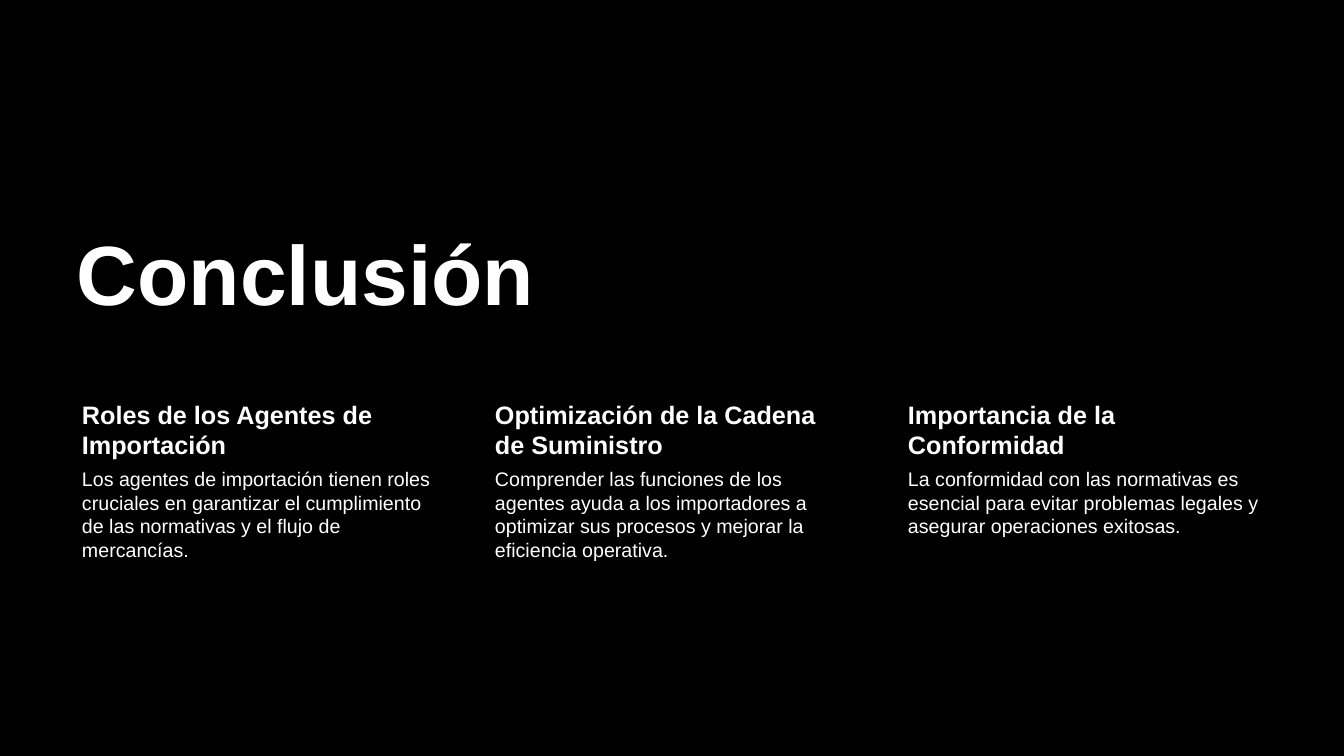
from pptx import Presentation
from pptx.dml.color import RGBColor
from pptx.enum.text import MSO_ANCHOR, MSO_AUTO_SIZE, PP_ALIGN
from pptx.util import Emu, Pt

BLACK = RGBColor(0, 0, 0)
WHITE = RGBColor(255, 255, 255)
SCALE = 914400 / 100.8

LEFT, PITCH, WIDTH = 67, 413, 375
HEAD_TOP, HEAD_HIGH, BODY_HIGH = 396, 69, 208

COLUMNS = [
    ("Roles de los Agentes de Importación",
     "Los agentes de importación tienen roles cruciales en garantizar el "
     "cumplimiento de las normativas y el flujo de mercancías."),
    ("Optimización de la Cadena de Suministro",
     "Comprender las funciones de los agentes ayuda a los importadores a "
     "optimizar sus procesos y mejorar la eficiencia operativa."),
    ("Importancia de la Conformidad",
     "La conformidad con las normativas es esencial para evitar problemas "
     "legales y asegurar operaciones exitosas."),
]


def px(count):
    return Emu(round(count * SCALE))


def write(frame, text, size, bold=False, font="Arial", color=WHITE,
          anchor=MSO_ANCHOR.TOP, pad=(10, 5, 10, 5), line=1.0, after=0):
    frame.word_wrap = True
    frame.auto_size = MSO_AUTO_SIZE.NONE
    frame.vertical_anchor = anchor
    (frame.margin_left, frame.margin_top,
     frame.margin_right, frame.margin_bottom) = map(px, pad)
    para = frame.paragraphs[0]
    para.alignment = PP_ALIGN.LEFT
    para.line_spacing = line
    para.space_after = Pt(after)
    run = para.add_run()
    run.text = text
    run.font.name = font
    run.font.size = Pt(size)
    run.font.bold = bold
    run.font.color.rgb = color


class Deck:
    def __init__(self, wide, high):
        self.file = Presentation()
        self.file.slide_width = px(wide)
        self.file.slide_height = px(high)
        self.slide = self.file.slides.add_slide(self.file.slide_layouts[5])
        fill = self.slide.background.fill
        fill.solid()
        fill.fore_color.rgb = BLACK

    def title(self, text, left, top, wide, high):
        shape = self.slide.shapes.title
        shape.left, shape.top = px(left), px(top)
        shape.width, shape.height = px(wide), px(high)
        write(shape.text_frame, text, 60, bold=True,
              anchor=MSO_ANCHOR.BOTTOM, line=0.9)

    def box(self, shapes, text, left, top, wide, high, **style):
        shape = shapes.add_textbox(px(left), px(top), px(wide), px(high))
        write(shape.text_frame, text, **style)

    def column(self, left, head, body):
        shapes = self.slide.shapes.add_group_shape().shapes
        self.box(shapes, head, left, HEAD_TOP, WIDTH, HEAD_HIGH,
                 size=18, bold=True, pad=(15, 3, 3, 3), after=6)
        self.box(shapes, body, left, HEAD_TOP + HEAD_HIGH, WIDTH, BODY_HIGH,
                 size=14, pad=(15, 2, 2, 2), after=5)


def main():
    deck = Deck(1344, 756)
    deck.title("Conclusión", LEFT, 204, 809, 125)
    for index, (head, body) in enumerate(COLUMNS):
        deck.column(LEFT + index * PITCH, head, body)
    deck.file.save("out.pptx")


if __name__ == "__main__":
    main()
